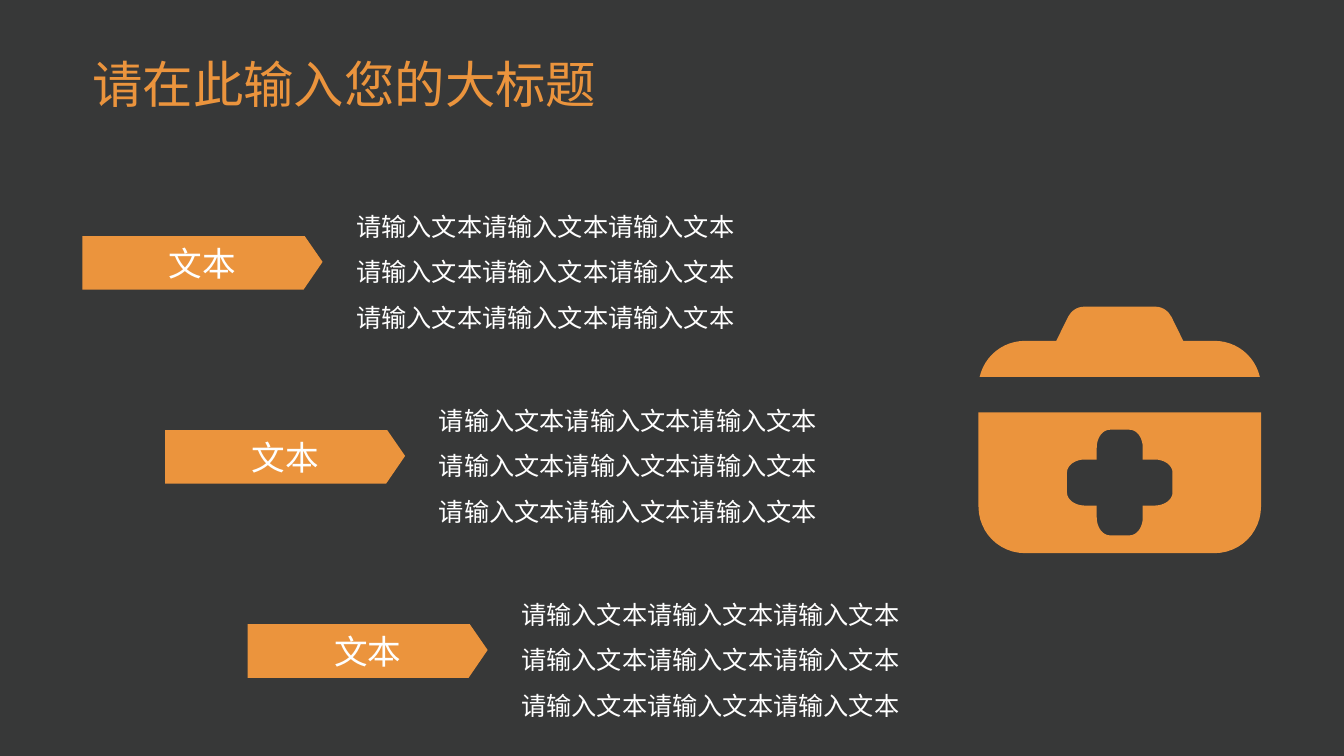
from dataclasses import dataclass
from math import cos, radians, sin

from lxml.etree import SubElement
from pptx import Presentation
from pptx.dml.color import RGBColor
from pptx.enum.text import MSO_ANCHOR, PP_ALIGN
from pptx.oxml.ns import qn
from pptx.util import Cm, Pt


@dataclass(frozen=True)
class Theme:
    font: str = "Noto Sans CJK SC"
    background: RGBColor = RGBColor(0x37, 0x38, 0x38)
    accent: RGBColor = RGBColor(0xEB, 0x94, 0x3D)
    label: RGBColor = RGBColor(0xFE, 0xFF, 0xFF)
    body: RGBColor = RGBColor(0xFF, 0xFF, 0xFF)
    title_size: Pt = Pt(36)
    label_size: Pt = Pt(24)
    body_size: Pt = Pt(18)


THEME = Theme()
ITEMS = [("文本", "请输入文本" * 9)] * 3
ITEM_LEFT, ITEM_TOP = 2.08, 5.95
STEP_X, STEP_Y = 2.08, 4.89
LABEL_OUTLINE = [(0, 0), (5.6, 0), (6.05, 0.65), (5.57, 1.35), (0, 1.35)]
KIT_CENTER = 28.22
CROSS_CENTER = 12.16


def set_all(target, values):
    for name, value in values.items():
        setattr(target, name, value)


def write(sp, text, size, color, **paragraph_format):
    tf = sp.text_frame
    set_all(tf, {"word_wrap": True, "vertical_anchor": MSO_ANCHOR.MIDDLE})
    p = tf.paragraphs[0]
    set_all(p, paragraph_format)
    r = p.add_run()
    r.text = text
    set_all(r.font, {"name": THEME.font, "size": size})
    r.font.color.rgb = color
    SubElement(r.font._element, qn("a:ea"), typeface=THEME.font)


def add_text(s, box, text, size, color, **paragraph_format):
    sp = s.shapes.add_textbox(*(Cm(v) for v in box))
    write(sp, text, size, color, **paragraph_format)


def add_outline(s, *contours):
    """Draw one accent-filled freeform from closed contours given in cm."""
    first, *others = [[(Cm(x), Cm(y)) for x, y in c] for c in contours]
    builder = s.shapes.build_freeform(*first[0])
    builder.add_line_segments(first[1:])
    for contour in others:
        builder.move_to(*contour[0])
        builder.add_line_segments(contour[1:])
    sp = builder.convert_to_shape()
    sp.shadow.inherit = False
    sp.fill.solid()
    sp.fill.fore_color.rgb = THEME.accent
    sp.line.fill.background()
    return sp


def arc(cx, cy, rx, ry, start, end, steps=12):
    angles = [radians(start + (end - start) * i / steps) for i in range(steps + 1)]
    return [(cx + rx * cos(a), cy + ry * sin(a)) for a in angles]


def mirror_x(half):
    """Close a left half, given relative to the kit's axis, with its right half."""
    return ([(KIT_CENTER + x, y) for x, y in half]
            + [(KIT_CENTER - x, y) for x, y in reversed(half)])


def add_first_aid_kit(s):
    lid = mirror_x(arc(-2.39, 9.76, 1.17, 1.17, 193, 270)
                   + [(-1.6, 8.59), (-1.3, 7.98)]
                   + arc(-0.9, 8.18, 0.44, 0.45, 210, 270))
    body = mirror_x(arc(-2.39, 12.77, 1.17, 1.17, 90, 180) + [(-3.56, 10.39)])
    quarter = (arc(-0.25, -0.88, 0.33, 0.45, 270, 180) + [(-0.58, -0.58)]
               + arc(-0.88, -0.25, 0.45, 0.33, 270, 180))
    cross = mirror_x([(x, CROSS_CENTER + y) for x, y in quarter]
                     + [(x, CROSS_CENTER - y) for x, y in reversed(quarter)])
    add_outline(s, cross, body, lid)


def add_item(s, index, label, text):
    left, top = ITEM_LEFT + index * STEP_X, ITEM_TOP + index * STEP_Y
    sp = add_outline(s, [(left + x, top + y) for x, y in LABEL_OUTLINE])
    write(sp, label, THEME.label_size, THEME.label, alignment=PP_ALIGN.CENTER)
    add_text(s, (left + 6.65, top - 1.38, 10.21, 4.17), text,
             THEME.body_size, THEME.body, line_spacing=1.5)


def main():
    prs = Presentation()
    set_all(prs, {"slide_width": Cm(33.87), "slide_height": Cm(19.05)})
    s = prs.slides.add_slide(prs.slide_layouts[6])
    s.background.fill.solid()
    s.background.fill.fore_color.rgb = THEME.background
    add_text(s, (2.08, 1.02, 29.67, 2.36), "请在此输入您的大标题",
             THEME.title_size, THEME.accent, line_spacing=0.9)
    for index, (label, text) in enumerate(ITEMS):
        add_item(s, index, label, text)
    add_first_aid_kit(s)
    prs.save("out.pptx")


if __name__ == "__main__":
    main()
